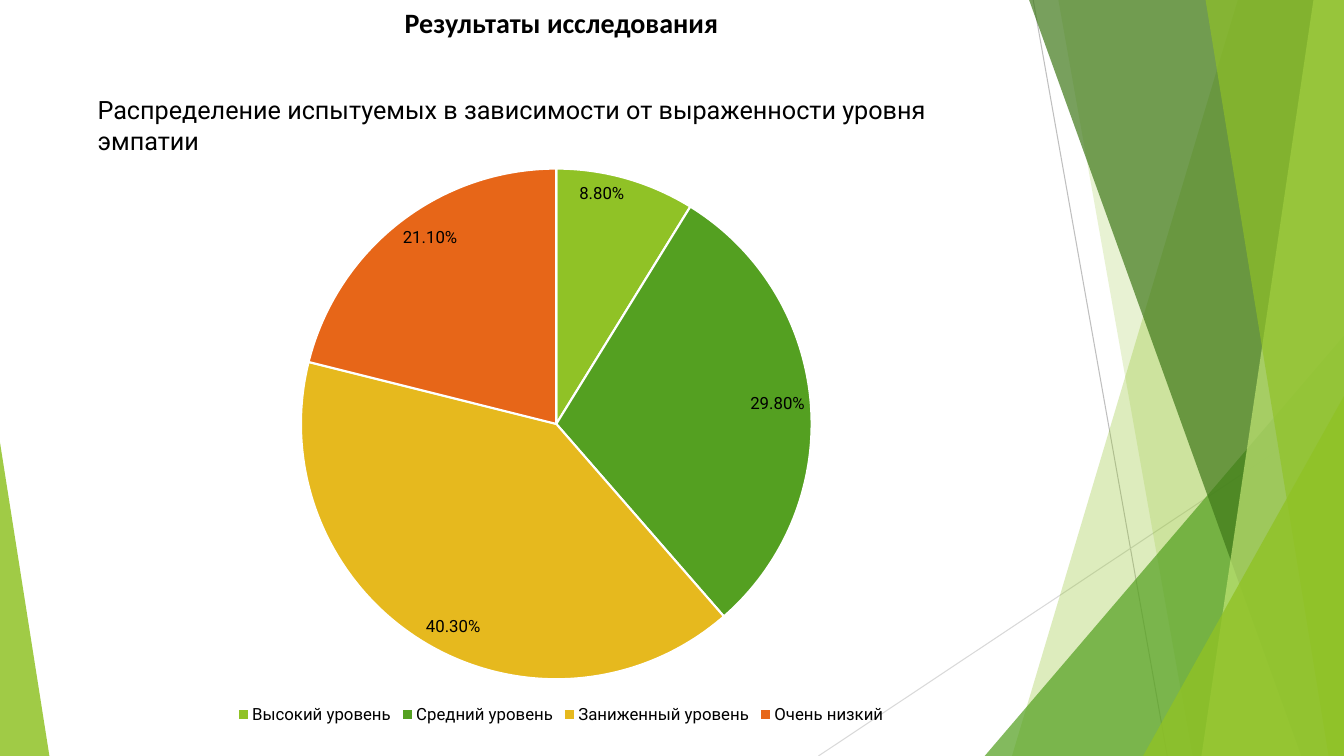
import pptx
import pptx.chart.data
import pptx.dml.color
import pptx.enum.chart
import pptx.enum.shapes
import pptx.enum.text
import pptx.oxml.ns
import pptx.oxml.xmlchemy
import pptx.util

Pt = pptx.util.Pt
RGBColor = pptx.dml.color.RGBColor
OxmlElement = pptx.oxml.xmlchemy.OxmlElement

BLACK = RGBColor(0x00, 0x00, 0x00)
WHITE = RGBColor(0xFF, 0xFF, 0xFF)
LIME = RGBColor(0x90, 0xC2, 0x26)
GREEN = RGBColor(0x54, 0xA0, 0x21)
FOREST = RGBColor(0x3F, 0x78, 0x19)
PALE_LIME = RGBColor(0xC0, 0xE4, 0x74)
YELLOW = RGBColor(0xE6, 0xB9, 0x1E)
ORANGE = RGBColor(0xE7, 0x66, 0x18)
GREY = RGBColor(0xBF, 0xBF, 0xBF)
LIGHT_GREY = RGBColor(0xD9, 0xD9, 0xD9)

WIDTH, HEIGHT = 960, 540

EMPATHY_LEVELS = [
    ("Высокий уровень", 0.088, LIME),
    ("Средний уровень", 0.298, GREEN),
    ("Заниженный уровень", 0.403, YELLOW),
    ("Очень низкий", 0.211, ORANGE),
]


class SlideBuilder:
    heading_font = "Calibri"
    body_font = "Roboto"

    def __init__(self, slide):
        self.slide = slide

    def style_font(self, font, size, name, bold=False):
        font.size = Pt(size)
        font.name = name
        font.bold = bold
        font.color.rgb = BLACK

    def title(self, text, left, top, width, height):
        heading = self.slide.shapes.title
        heading.left, heading.top = Pt(left), Pt(top)
        heading.width, heading.height = Pt(width), Pt(height)
        frame = heading.text_frame
        frame.text = text
        frame.auto_size = pptx.enum.text.MSO_AUTO_SIZE.NONE
        frame.vertical_anchor = pptx.enum.text.MSO_ANCHOR.TOP
        paragraph = frame.paragraphs[0]
        paragraph.alignment = pptx.enum.text.PP_ALIGN.CENTER
        self.style_font(paragraph.font, 20, self.heading_font, bold=True)

    def caption(self, text, left, top, width, height):
        box = self.slide.shapes.add_textbox(Pt(left), Pt(top), Pt(width), Pt(height))
        frame = box.text_frame
        frame.word_wrap = True
        frame.text = text
        self.style_font(frame.paragraphs[0].font, 18, self.body_font)

    def thin_line(self, start, end, color):
        line = self.slide.shapes.add_connector(
            pptx.enum.shapes.MSO_CONNECTOR.STRAIGHT, *map(Pt, start + end))
        line.line.color.rgb = color
        line.line.width = Pt(0.75)
        line.element.spPr.append(OxmlElement("a:effectLst"))

    def glaze(self, shape, color, opacity):
        """Give the shape a see-through fill, with opacity in percent."""
        shape.shadow.inherit = False
        shape.line.fill.background()
        shape.fill.solid()
        shape.fill.fore_color.rgb = color
        alpha = OxmlElement("a:alpha")
        alpha.set("val", str(opacity * 1000))
        shape.element.spPr.find(".//" + pptx.oxml.ns.qn("a:srgbClr")).append(alpha)

    def right_band(self, top_x, bottom_x, color, opacity):
        """Fill from a slanted edge to the right side of the slide."""
        outline = self.slide.shapes.build_freeform(Pt(top_x), 0)
        corners = [(WIDTH, 0), (WIDTH, HEIGHT), (bottom_x, HEIGHT)]
        outline.add_line_segments([(Pt(x), Pt(y)) for x, y in corners], close=True)
        self.glaze(outline.convert_to_shape(), color, opacity)

    def corner(self, left, top, width, apex, color, opacity):
        """Draw a triangle that stands on the bottom of the slide."""
        triangle = self.slide.shapes.add_shape(
            pptx.enum.shapes.MSO_SHAPE.ISOSCELES_TRIANGLE,
            Pt(left), Pt(top), Pt(width), Pt(HEIGHT - top))
        triangle.adjustments[0] = apex
        self.glaze(triangle, color, opacity)

    def pie(self, levels, left, top, width, height):
        data = pptx.chart.data.CategoryChartData(number_format="0.00%")
        data.categories = [name for name, share, color in levels]
        data.add_series("Series 1", [share for name, share, color in levels])
        chart = self.slide.shapes.add_chart(
            pptx.enum.chart.XL_CHART_TYPE.PIE,
            Pt(left), Pt(top), Pt(width), Pt(height), data).chart
        self.style_font(chart.font, 10, self.body_font)
        chart.has_title = False
        chart.has_legend = True
        chart.legend.position = pptx.enum.chart.XL_LEGEND_POSITION.BOTTOM
        chart.legend.include_in_layout = False
        self.style_font(chart.legend.font, 12, self.body_font)

        plot = chart.plots[0]
        plot.vary_by_categories = True
        for index, (name, share, color) in enumerate(levels):
            sector = plot.series[0].points[index].format
            sector.fill.solid()
            sector.fill.fore_color.rgb = color
            sector.line.color.rgb = WHITE
            sector.line.width = Pt(1.5)

        plot.has_data_labels = True
        labels = plot.data_labels
        labels.show_value = True
        labels.show_percentage = False
        labels.number_format = "0.00%"
        labels.number_format_is_linked = False
        labels.position = pptx.enum.chart.XL_LABEL_POSITION.INSIDE_END
        self.style_font(labels.font, 12, self.body_font)
        self.place_plot(chart, x=0.21, y=0.06, w=0.57, h=0.86)

    def place_plot(self, chart, **fractions):
        """Fix the plot area at fractions of the chart's size."""
        plot_area = chart.element.chart.plotArea
        for old_layout in plot_area.findall(pptx.oxml.ns.qn("c:layout")):
            plot_area.remove(old_layout)
        layout = OxmlElement("c:layout")
        manual = OxmlElement("c:manualLayout")
        settings = {"layoutTarget": "inner", "xMode": "edge", "yMode": "edge", **fractions}
        for tag, value in settings.items():
            setting = OxmlElement("c:" + tag)
            setting.set("val", str(value))
            manual.append(setting)
        layout.append(manual)
        plot_area.insert(0, layout)


def main():
    presentation = pptx.Presentation()
    presentation.slide_width, presentation.slide_height = Pt(WIDTH), Pt(HEIGHT)
    builder = SlideBuilder(presentation.slides.add_slide(presentation.slide_layouts[5]))

    builder.thin_line((738, 0), (833.8, HEIGHT), GREY)
    builder.thin_line((WIDTH, 290.2), (584.6, HEIGHT), LIGHT_GREY)
    builder.right_band(884.2, 722.9, LIME, 30)
    builder.right_band(756, 851.8, LIME, 20)
    builder.corner(703.4, 239.8, 256.6, 1, GREEN, 72)
    builder.right_band(735.1, 929.5, FOREST, 70)
    builder.right_band(938.2, 858.2, PALE_LIME, 70)
    builder.right_band(861.1, 949, LIME, 65)
    builder.corner(816.5, 283, 143.5, 1, LIME, 80)
    builder.corner(0, 316.1, 35.3, 0, LIME, 85)

    builder.title("Результаты исследования", 90, 0, 622, 41)
    builder.pie(EMPATHY_LEVELS, 80.6, 93.6, 640, 427)
    builder.caption(
        "Распределение испытуемых в зависимости от выраженности уровня эмпатии",
        62.6, 64.1, 675.4, 28.8)
    presentation.save("out.pptx")


if __name__ == "__main__":
    main()
